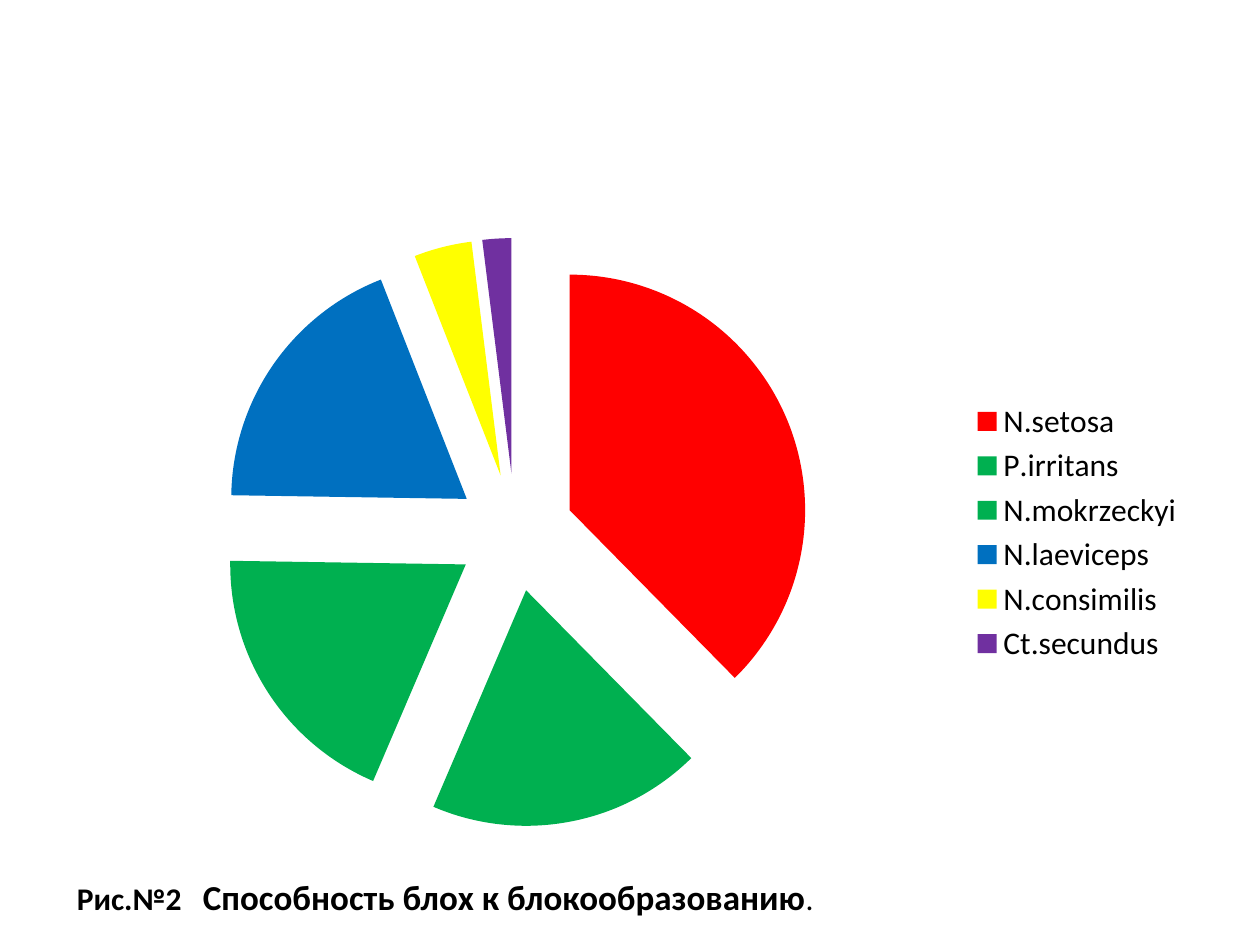
from lxml import etree
from pptx import Presentation
from pptx import util as u
from pptx.chart import data as chart_data
from pptx.dml import color
from pptx.enum import chart as chart_enum
from pptx.oxml import ns


def paint(target, colour):
    target.rgb = color.RGBColor.from_string(colour)


def explode_before(anchor, percent):
    explosion = etree.Element(ns.qn("c:explosion"))
    explosion.set("val", str(percent))
    anchor.addprevious(explosion)


presentation = Presentation()
presentation.slide_width = u.Cm(25.4)
presentation.slide_height = u.Cm(19.05)
slide = presentation.slides.add_slide(presentation.slide_layouts[6])

fleas = [
    ("N.setosa", 38, "FF0000"),
    ("P.irritans", 19, "00B050"),
    ("N.mokrzeckyi", 19, "00B050"),
    ("N.laeviceps", 19, "0070C0"),
    ("N.consimilis", 4, "FFFF00"),
    ("Ct.secundus", 2, "7030A0"),
]
shares = chart_data.CategoryChartData()
shares.categories = [species for species, share, colour in fleas]
shares.add_series("Series 1", [share for species, share, colour in fleas])
pie = slide.shapes.add_chart(
    chart_enum.XL_CHART_TYPE.PIE,
    u.Cm(1.27), u.Cm(4.45), u.Cm(22.86), u.Cm(12.57), shares,
).chart
pie.has_title = False
pie.font.name = "Calibri"
pie.font.size = u.Pt(18)
paint(pie.font.color, "000000")
pie.has_legend = True
pie.legend.position = chart_enum.XL_LEGEND_POSITION.RIGHT
pie.legend.include_in_layout = False

plot = pie.plots[0]
plot.vary_by_categories = True
series = plot.series[0]
for index, (species, share, colour) in enumerate(fleas):
    slice_format = series.points[index].format
    slice_format.fill.solid()
    paint(slice_format.fill.fore_color, colour)
    slice_format.line.fill.background()

slices = series._element.findall(ns.qn("c:dPt"))
explode_before(slices[0], 25)
for wedge in slices:
    explode_before(wedge.find(ns.qn("c:spPr")), 25)

caption = slide.shapes.add_textbox(u.Cm(1.3), u.Cm(17.53), u.Cm(15.8), u.Cm(1.11)).text_frame
caption.word_wrap = True
wording = caption.paragraphs[0]
wording.font.name = "Calibri"
paint(wording.font.color, "000000")
for words, size, bold in [
    ("Рис.№2\t", 18, True),
    ("Способность блох к блокообразованию", 20, True),
    (".", 18, False),
]:
    run = wording.add_run()
    run.text = words
    run.font.size = u.Pt(size)
    run.font.bold = bold

presentation.save("out.pptx")
